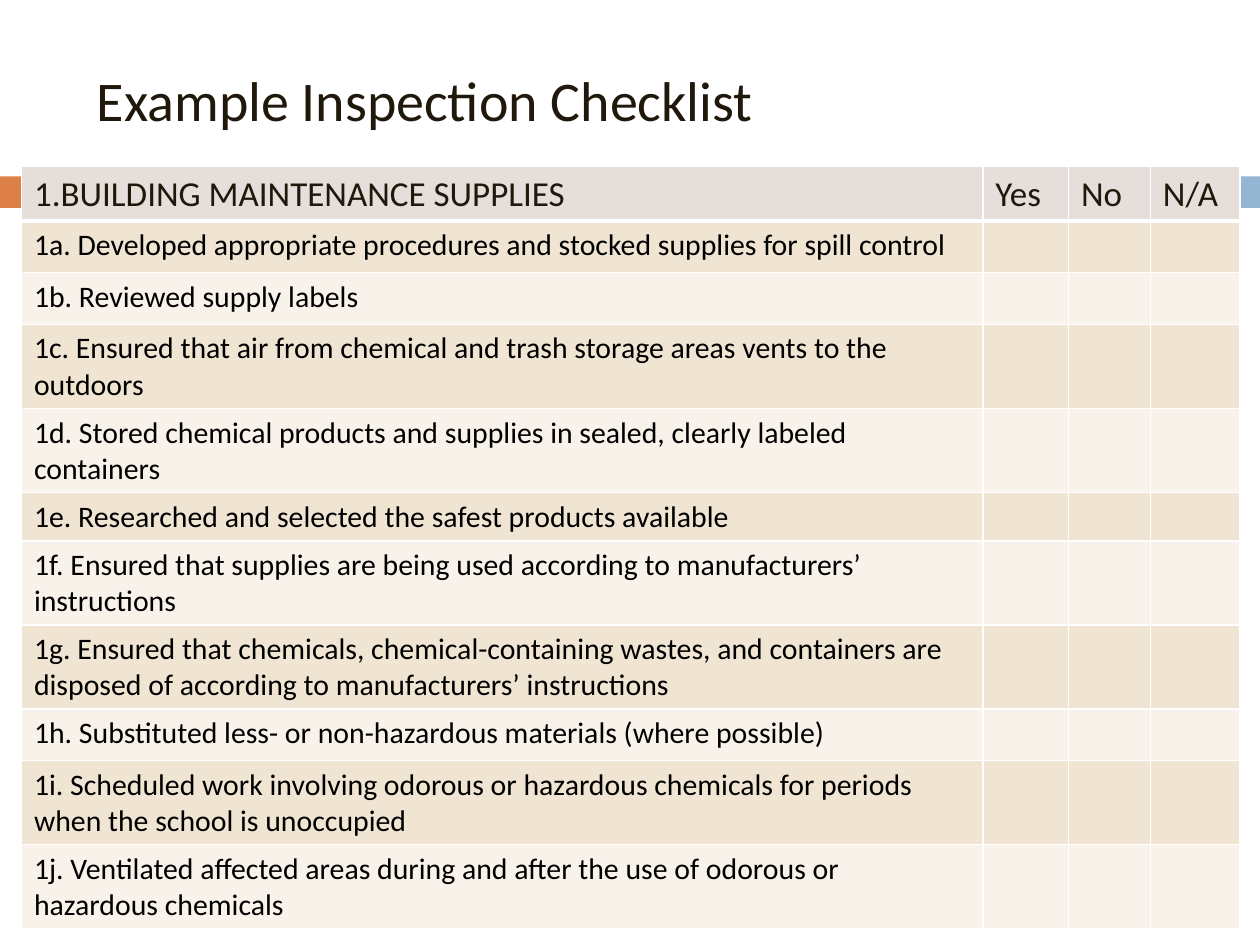
from dataclasses import dataclass

from lxml.etree import SubElement
from pptx import Presentation
from pptx.dml.color import RGBColor as RGB
from pptx.enum.shapes import MSO_SHAPE as SHAPE
from pptx.enum.text import MSO_ANCHOR as ANCHOR
from pptx.oxml.ns import qn
from pptx.util import Inches, Pt


@dataclass(frozen=True)
class Theme:
    font: str = "Calibri"
    title_size: float = 32
    header_size: float = 20
    body_size: float = 17
    dark: str = "20190B"
    black: str = "000000"
    white: str = "FFFFFF"
    orange: str = "DD8047"
    blue: str = "94B6D2"
    header_fill: str = "E6DEDB"
    bands: tuple = ("F0E4D2", "F8F2EA")


THEME = Theme()

HEADINGS = ["1.BUILDING MAINTENANCE SUPPLIES", "Yes", "No", "N/A"]
CHECKS = [
    "1a. Developed appropriate procedures and stocked supplies for spill control",
    "1b. Reviewed supply labels",
    "1c. Ensured that air from chemical and trash storage areas vents to the outdoors",
    "1d. Stored chemical products and supplies in sealed, clearly labeled containers",
    "1e. Researched and selected the safest products available",
    "1f. Ensured that supplies are being used according to manufacturers’ instructions",
    "1g. Ensured that chemicals, chemical-containing wastes, and containers are "
    "disposed of according to manufacturers’ instructions",
    "1h. Substituted less- or non-hazardous materials (where possible)",
    "1i. Scheduled work involving odorous or hazardous chemicals for periods "
    "when the school is unoccupied",
    "1j. Ventilated affected areas during and after the use of odorous or hazardous chemicals",
]
COL_WIDTHS = [7.63, 0.68, 0.65, 0.71]
ROW_HEIGHT = 0.41
SHORT_ROW, SHORT_HEIGHT = 5, 0.35


def add_run(p, text, size, color):
    r = p.add_run()
    r.text = text
    r.font.name = THEME.font
    r.font.size = Pt(size)
    r.font.color.rgb = RGB.from_string(color)


def add_bar(slide, left, width, color):
    sp = slide.shapes.add_shape(
        SHAPE.RECTANGLE, Inches(left), Inches(1.4), Inches(width), Inches(0.25))
    sp.shadow.inherit = False
    sp.fill.solid()
    sp.fill.fore_color.rgb = RGB.from_string(color)
    sp.line.fill.background()


def add_title(slide, text):
    box = slide.shapes.add_textbox(Inches(0.67), Inches(0.25), Inches(8.92), Inches(1.08))
    tf = box.text_frame
    tf.word_wrap = True
    tf.vertical_anchor = ANCHOR.MIDDLE
    add_run(tf.paragraphs[0], text, THEME.title_size, THEME.dark)


def set_borders(cell, bottom=1):
    tc_pr = cell._tc.get_or_add_tcPr()
    for side, width in (("L", 1), ("R", 1), ("T", 1), ("B", bottom)):
        ln = SubElement(tc_pr, qn(f"a:ln{side}"), w=str(Pt(width)))
        fill = SubElement(ln, qn("a:solidFill"))
        SubElement(fill, qn("a:srgbClr"), val=THEME.white)


def fill_cell(cell, text, size, color, fill, bottom=1):
    set_borders(cell, bottom)
    cell.fill.solid()
    cell.fill.fore_color.rgb = RGB.from_string(fill)
    p = cell.text_frame.paragraphs[0]
    if text:
        add_run(p, text, size, color)
    else:  # keeps an empty cell from stretching its row
        SubElement(p._p, qn("a:endParaRPr"), sz=str(int(size * 100)))


def add_checklist(slide):
    frame = slide.shapes.add_table(
        len(CHECKS) + 1, len(HEADINGS),
        Inches(0.17), Inches(1.32), Inches(sum(COL_WIDTHS)), Inches(6.03))
    table = frame.table
    for column, width in zip(table.columns, COL_WIDTHS):
        column.width = Inches(width)
    for i, row in enumerate(table.rows):
        row.height = Inches(SHORT_HEIGHT if i == SHORT_ROW else ROW_HEIGHT)
    frame.height = Inches(6.03)

    # Header row
    for cell, text in zip(table.rows[0].cells, HEADINGS):
        fill_cell(cell, text, THEME.header_size, THEME.dark, THEME.header_fill, bottom=3)

    # Banded checks with empty answer cells
    for i, check in enumerate(CHECKS):
        for j, cell in enumerate(table.rows[i + 1].cells):
            fill_cell(cell, check if j == 0 else "", THEME.body_size, THEME.black,
                      THEME.bands[i % 2])


def main():
    prs = Presentation()
    prs.slide_width, prs.slide_height = Inches(10), Inches(7.5)
    slide = prs.slides.add_slide(prs.slide_layouts[6])

    # Accent bars behind the table
    add_bar(slide, 0, 0.58, THEME.orange)
    add_bar(slide, 0.65, 9.35, THEME.blue)

    # Title and checklist
    add_title(slide, "Example Inspection Checklist")
    add_checklist(slide)

    prs.save("out.pptx")


if __name__ == "__main__":
    main()
